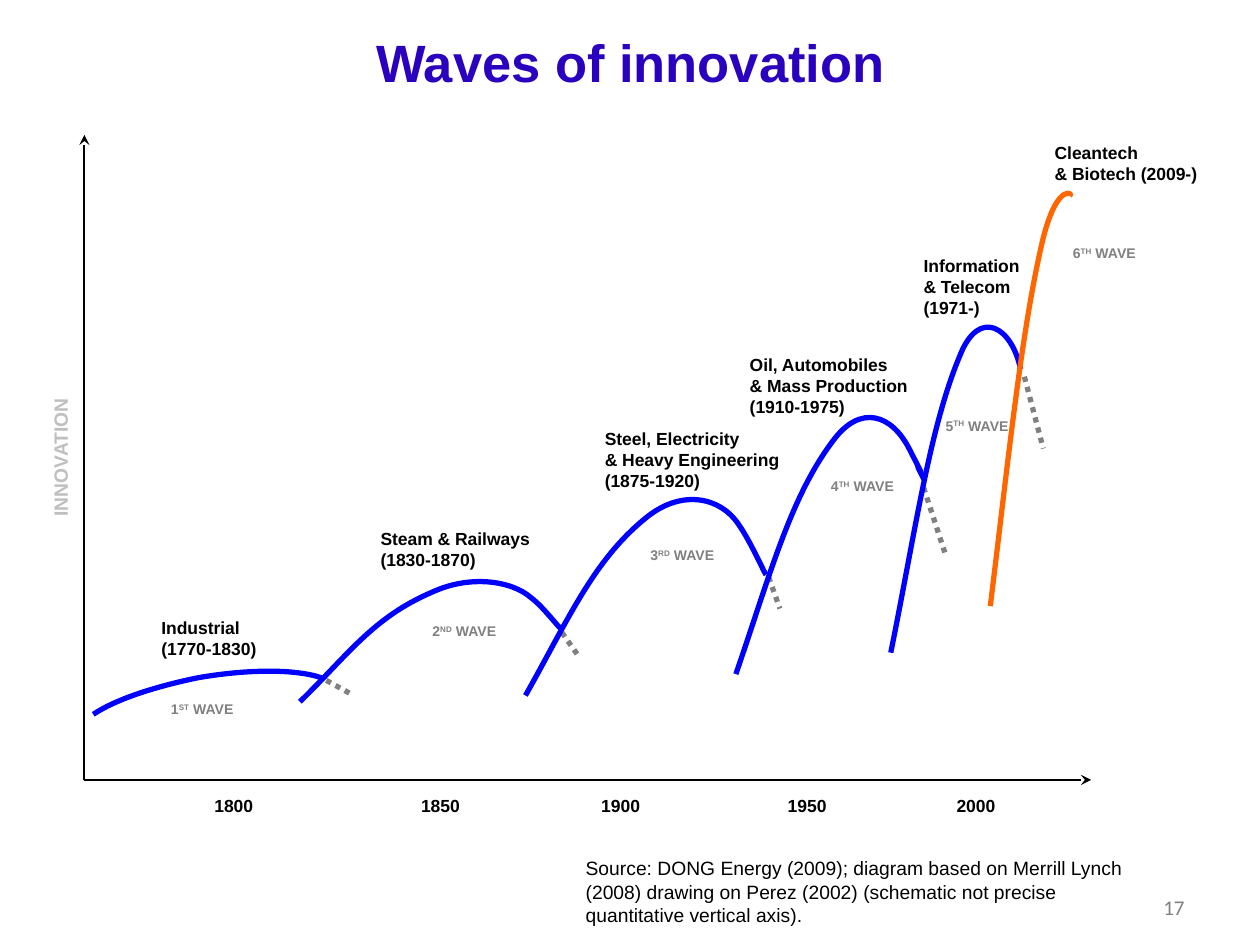
from dataclasses import dataclass

from pptx import Presentation
from pptx.dml.color import RGBColor
from pptx.enum.dml import MSO_LINE
from pptx.enum.shapes import MSO_CONNECTOR, MSO_SHAPE
from pptx.enum.text import MSO_ANCHOR as Anchor, PP_ALIGN as Align
from pptx.oxml.ns import qn
from pptx.oxml.xmlchemy import OxmlElement
from pptx.util import Inches, Pt

BLACK = RGBColor(0, 0, 0)
WHITE = RGBColor(255, 255, 255)
TITLE_BLUE = RGBColor(0x2A, 0x01, 0xBF)
WAVE_BLUE = RGBColor(0, 0, 255)
ORANGE = RGBColor(0xFF, 0x66, 0)
GRAY = RGBColor(0x80, 0x80, 0x80)
LIGHT_GRAY = RGBColor(0xBF, 0xBF, 0xBF)

ORIGIN = (0.67, 6.19)
WIDE_INSETS = (0.1, 0.05)
TIGHT_INSETS = (0.04, 0.04)
YEARS = {"1800": 1.38, "1850": 3.02, "1900": 4.45, "1950": 5.93, "2000": 7.27}


@dataclass
class Wave:
    suffix: str
    name_lines: list
    name_area: tuple
    tag_corner: tuple
    curve: list
    fade: tuple = None
    color: RGBColor = WAVE_BLUE


WAVES = [
    Wave("ST", ["Industrial", "(1770-1830)"], (1.24, 4.86, 0.95, 0.24), (1.13, 5.52),
         [(0.74, 5.67), (0.92, 5.55), (1.23, 5.45), (1.57, 5.38),
          (1.97, 5.31), (2.35, 5.31), (2.55, 5.38)],
         ((2.59, 5.4), (2.79, 5.51))),
    Wave("ND", ["Steam & Railways", "(1830-1870)"], (2.98, 4.15, 1.48, 0.24), (3.21, 4.9),
         [(2.38, 5.57), (2.76, 5.2), (2.96, 4.9), (3.43, 4.7), (3.73, 4.56),
          (4.06, 4.61), (4.21, 4.74), (4.33, 4.83), (4.45, 5.01), (4.46, 4.99)],
         ((4.46, 5.02), (4.6, 5.22))),
    Wave("RD", ["Steel, Electricity", "& Heavy Engineering", "(1875-1920)"],
         (4.76, 3.36, 1.57, 0.55), (4.94, 4.3),
         [(4.17, 5.52), (4.51, 4.92), (4.71, 4.44), (5.14, 4.1), (5.42, 3.88),
          (5.72, 3.95), (5.86, 4.16), (5.96, 4.3), (6.08, 4.58), (6.08, 4.56)],
         ((6.1, 4.58), (6.19, 4.83))),
    Wave("TH", ["Oil, Automobiles", "& Mass Production", "(1910-1975)"],
         (5.91, 2.77, 1.82, 0.24), (6.37, 3.75),
         [(5.84, 5.35), (6.11, 4.57), (6.27, 3.95), (6.61, 3.5), (6.83, 3.2),
          (7.08, 3.29), (7.22, 3.57), (7.43, 3.98), (7.18, 3.5), (7.34, 3.82)],
         ((7.33, 3.87), (7.5, 4.39))),
    Wave("TH", ["Information", "& Telecom", "(1971-)"], (7.29, 1.98, 1.56, 0.32), (7.28, 3.27),
         [(7.07, 5.18), (7.27, 4.19), (7.38, 3.39), (7.62, 2.82),
          (7.77, 2.44), (8.03, 2.59), (8.1, 2.93)],
         ((8.13, 2.99), (8.28, 3.56))),
    Wave("TH", ["Cleantech", "& Biotech (2009-)"], (8.33, 1.09, 1.82, 0.56), (8.29, 1.9),
         [(7.86, 4.81), (8.01, 3.59), (8.11, 2.6), (8.28, 1.89),
          (8.4, 1.42), (8.53, 1.55), (8.49, 1.55)],
         color=ORANGE),
]


def add_span(para, text, size, color, bold=True, font="Arial"):
    span = para.add_run()
    span.text = text
    span.font.size = Pt(size)
    span.font.name = font
    span.font.bold = bold
    span.font.color.rgb = color
    return span


def set_frame(box, insets, anchor=Anchor.TOP):
    frame = box.text_frame
    frame.word_wrap = True
    frame.vertical_anchor = anchor
    frame.margin_left = frame.margin_right = Inches(insets[0])
    frame.margin_top = frame.margin_bottom = Inches(insets[1])
    return frame


def add_text(slide, area, lines, size, color, align=Align.LEFT, insets=TIGHT_INSETS,
             anchor=Anchor.TOP, bold=True, font="Arial"):
    box = slide.shapes.add_textbox(*map(Inches, area))
    frame = set_frame(box, insets, anchor)
    for index, line in enumerate(lines):
        para = frame.add_paragraph() if index else frame.paragraphs[0]
        para.alignment = align
        add_span(para, line, size, color, bold, font)
    return box


def add_line(slide, start, end, color, width):
    line = slide.shapes.add_connector(MSO_CONNECTOR.STRAIGHT, *map(Inches, start + end))
    line.line.color.rgb = color
    line.line.width = Pt(width)
    line._element.spPr.append(OxmlElement("a:effectLst"))
    return line


def add_axis(slide, end):
    axis = add_line(slide, ORIGIN, end, BLACK, 1.25)
    arrow = OxmlElement("a:tailEnd")
    arrow.set("type", "stealth")
    axis.line._get_or_add_ln().append(arrow)


def add_curve(slide, points, color):
    start, *rest = [tuple(map(Inches, point)) for point in points]
    builder = slide.shapes.build_freeform(*start)
    builder.add_line_segments(rest, close=False)
    curve = builder.convert_to_shape()
    segments = list(curve._element.iter(qn("a:lnTo")))
    for first in range(0, len(segments), 3):
        bezier = OxmlElement("a:cubicBezTo")
        segments[first].addprevious(bezier)
        for segment in segments[first:first + 3]:
            bezier.append(segment[0])
            segment.getparent().remove(segment)
    curve.fill.background()
    curve.line.color.rgb = color
    curve.line.width = Pt(3)
    curve.shadow.inherit = False


def add_wave_tag(slide, corner, number, suffix):
    box = add_text(slide, corner + (0.95, 0.24), [str(number)], 8, GRAY, Align.CENTER)
    para = box.text_frame.paragraphs[0]
    ordinal = add_span(para, suffix, 8, GRAY)
    ordinal.font._element.set("baseline", "30000")
    add_span(para, " WAVE", 8, GRAY)


def add_wave(slide, number, wave):
    add_wave_tag(slide, wave.tag_corner, number, wave.suffix)
    add_curve(slide, wave.curve, wave.color)
    if wave.fade:
        fade = add_line(slide, *wave.fade, GRAY, 3)
        fade.line.dash_style = MSO_LINE.ROUND_DOT
    add_text(slide, wave.name_area, wave.name_lines, 10, BLACK)


def add_year(slide, year, left):
    box = slide.shapes.add_shape(MSO_SHAPE.RECTANGLE, *map(Inches, (left, 6.27, 0.95, 0.24)))
    box.fill.solid()
    box.fill.fore_color.rgb = WHITE
    box.line.fill.background()
    box.shadow.inherit = False
    para = set_frame(box, TIGHT_INSETS).paragraphs[0]
    para.alignment = Align.CENTER
    add_span(para, year, 10, BLACK)


def main():
    deck = Presentation()
    deck.slide_width, deck.slide_height = Inches(10), Inches(7.5)
    slide = deck.slides.add_slide(deck.slide_layouts[6])

    page_number = add_text(slide, (7.17, 6.83, 2.33, 0.52), ["17"], 12, GRAY, Align.RIGHT,
                           WIDE_INSETS, Anchor.BOTTOM, False, "Calibri")
    page_number.text_frame.paragraphs[0].line_spacing = 0.8
    add_text(slide, (0.2, 0.21, 9.61, 0.55), ["Waves of innovation"], 30, TITLE_BLUE,
             Align.CENTER, WIDE_INSETS, Anchor.MIDDLE)

    add_axis(slide, (0.67, 1.07))
    add_axis(slide, (8.66, 6.19))
    axis_title = add_text(slide, (-0.13, 3.5, 1.21, 0.26), ["INNOVATION"], 11, LIGHT_GRAY,
                          Align.CENTER)
    axis_title.rotation = 270
    for year, left in YEARS.items():
        add_year(slide, year, left)
    for number, wave in enumerate(WAVES, 1):
        add_wave(slide, number, wave)

    source = ("Source: DONG Energy (2009); diagram based on Merrill Lynch (2008) drawing on "
              "Perez (2002) (schematic not precise quantitative vertical axis).")
    add_text(slide, (4.55, 6.75, 4.7, 0.67), [source], 11, BLACK,
             insets=WIDE_INSETS, bold=False)
    deck.save("out.pptx")


if __name__ == "__main__":
    main()
